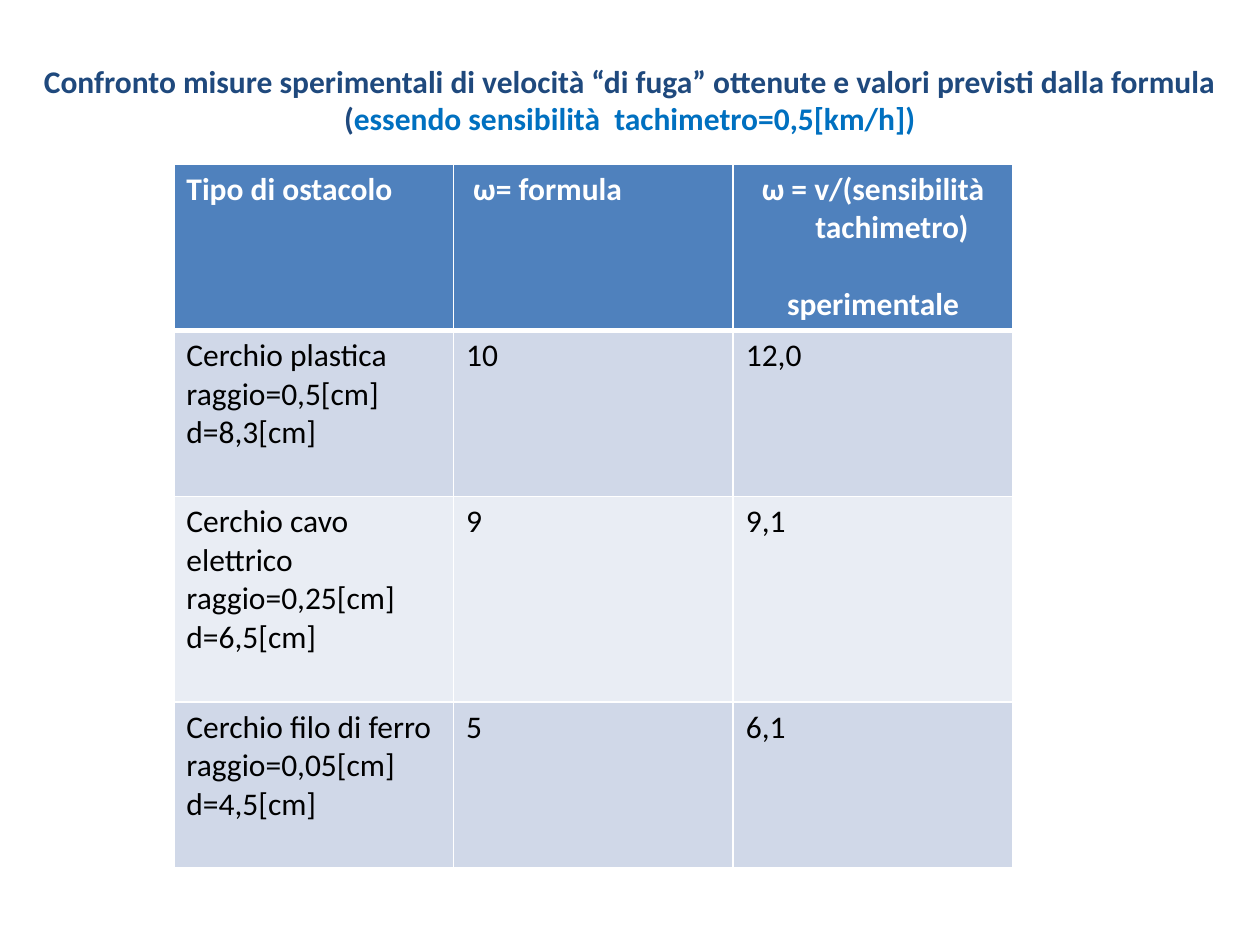
from lxml import etree
from pptx import Presentation
from pptx.dml.color import RGBColor
from pptx.enum.text import PP_ALIGN
from pptx.oxml.ns import qn
from pptx.util import Inches, Pt

CENTER = PP_ALIGN.CENTER
COLORS = {
    "title": "1F497D",
    "note": "0070C0",
    "header": "4F81BD",
    "odd_row": "D0D8E8",
    "even_row": "E9EDF4",
    "white": "FFFFFF",
    "black": "000000",
}


def style(font, color, bold):
    font.name = "Calibri"
    font.size = Pt(18)
    font.bold = bold
    font.color.rgb = RGBColor.from_string(COLORS[color])


def add_border(cell, side, width):
    line = etree.SubElement(cell._tc.get_or_add_tcPr(), qn(f"a:ln{side}"), w=str(Pt(width)))
    fill = etree.SubElement(line, qn("a:solidFill"))
    etree.SubElement(fill, qn("a:srgbClr"), val=COLORS["white"])


prs = Presentation()
prs.slide_width, prs.slide_height = Inches(10), Inches(7.5)
slide = prs.slides.add_slide(prs.slide_layouts[6])

# Comparison table: one list of paragraphs per cell
rows = [
    [["Tipo di ostacolo"], [" ω= formula"],
     ["ω = v/(sensibilità tachimetro)", "sperimentale"]],
    [["Cerchio plastica", "raggio=0,5[cm]", "d=8,3[cm]"], ["10"], ["12,0"]],
    [["Cerchio cavo elettrico", "raggio=0,25[cm]", "d=6,5[cm]"], ["9"], ["9,1"]],
    [["Cerchio filo di ferro", "raggio=0,05[cm]", "d=4,5[cm]"], ["5"], ["6,1"]],
]
row_heights = [1.32, 1.32, 1.63, 1.32]
row_fills = ["header", "odd_row", "even_row", "odd_row"]

comparison = slide.shapes.add_table(
    len(rows), 3, Inches(1.38), Inches(1.3), Inches(6.67), Inches(sum(row_heights))
).table
for column in comparison.columns:
    column.width = Inches(2.22)

for r, row in enumerate(rows):
    comparison.rows[r].height = Inches(row_heights[r])
    is_header = r == 0
    for c, lines in enumerate(row):
        cell = comparison.cell(r, c)
        # The rule under the header is thicker than the others
        for side, width in (("L", 1), ("R", 1), ("T", 3 if r == 1 else 1), ("B", 3 if is_header else 1)):
            add_border(cell, side, width)
        cell.fill.solid()
        cell.fill.fore_color.rgb = RGBColor.from_string(COLORS[row_fills[r]])
        cell.text = "\n".join(lines)
        for paragraph in cell.text_frame.paragraphs:
            style(paragraph.font, "white" if is_header else "black", is_header)

# Centred hanging indent in the experimental header
formula, experimental = comparison.cell(0, 2).text_frame.paragraphs
for paragraph in (formula, experimental):
    paragraph.alignment = CENTER
    properties = paragraph._p.get_or_add_pPr()
    properties.set("marL", str(Inches(0.3)))
    properties.set("indent", str(Inches(-0.3)))
experimental.space_before = Pt(22)

# Title with the sensitivity note below
title = slide.shapes.add_textbox(0, Inches(0.44), Inches(10), Inches(0.71)).text_frame
title.word_wrap = True
heading = title.paragraphs[0]
heading.text = "Confronto misure sperimentali di velocità “di fuga” ottenute e valori previsti dalla formula"
heading.alignment = CENTER
style(heading.font, "title", True)

note = title.add_paragraph()
note.alignment = CENTER
for text, color in (("(", "title"), ("essendo sensibilità  tachimetro=0,5[km/h])", "note")):
    run = note.add_run()
    run.text = text
    style(run.font, color, True)

prs.save("out.pptx")
